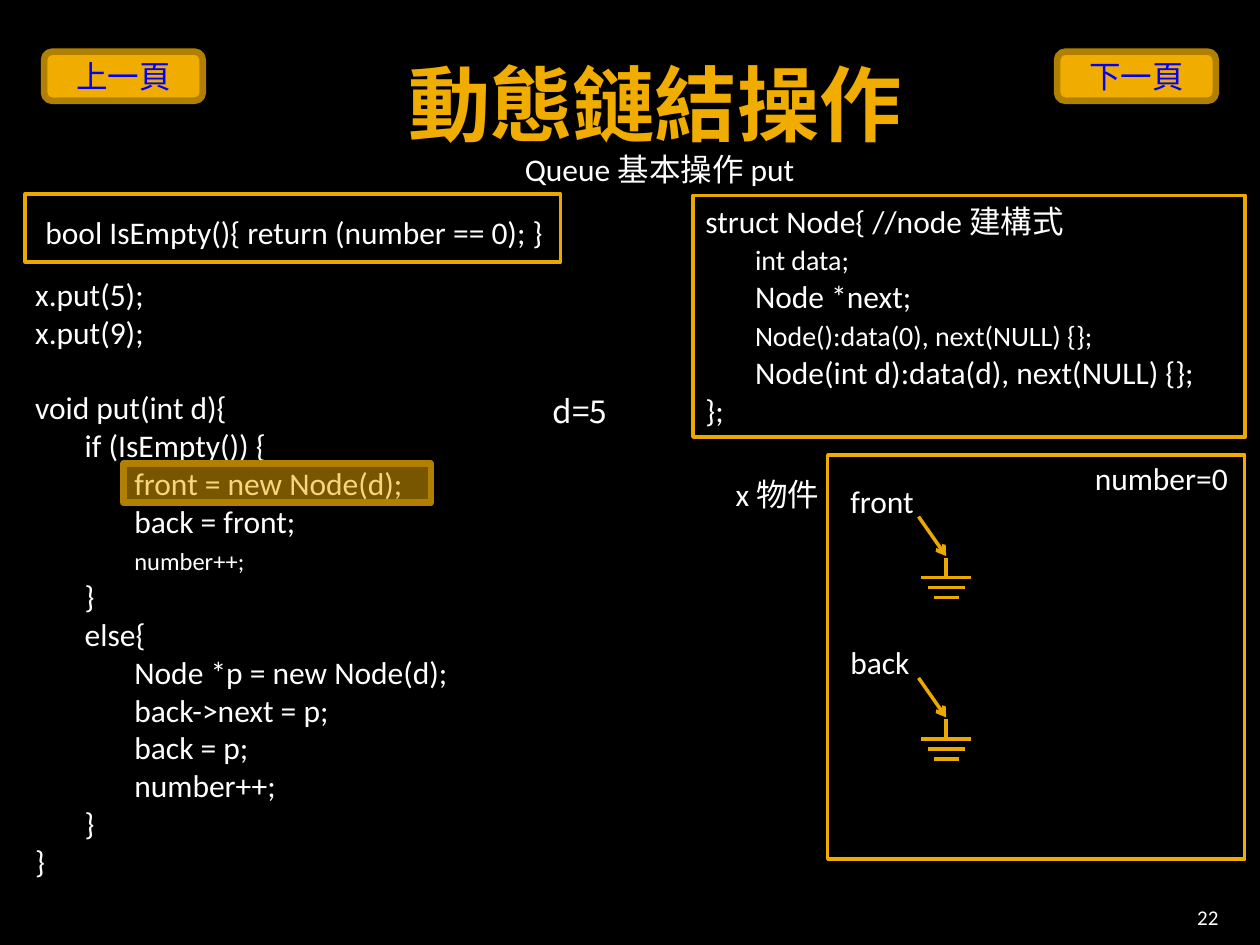
from lxml.etree import SubElement
from pptx import Presentation
from pptx.dml.color import RGBColor
from pptx.enum.shapes import MSO_CONNECTOR as Link, MSO_SHAPE as Preset
from pptx.enum.text import MSO_ANCHOR as Anchor, PP_ALIGN as Align
from pptx.oxml.ns import qn
from pptx.util import Pt

BLACK = RGBColor(0x00, 0x00, 0x00)
WHITE = RGBColor(0xFF, 0xFF, 0xFF)
BLUE = RGBColor(0x00, 0x00, 0xFF)
AMBER = RGBColor(0xF0, 0xAD, 0x00)
GOLD = RGBColor(0xEB, 0xA9, 0x00)
BRONZE = RGBColor(0xB2, 0x80, 0x00)
LATIN, CJK = "Calibri", "Noto Sans CJK SC"
TAB = 28.35

PUT_CODE = [
    "void put(int d){", "\tif (IsEmpty()) {", "\t\tfront = new Node(d);",
    "\t\tback = front;", ("\t\t", "number++;", 14), "\t}", "\telse{",
    "\t\tNode *p = new Node(d);", "\t\tback->next = p;", "\t\tback = p;",
    "\t\tnumber++;", "\t}", "}",
]
NODE_CODE = [
    "struct Node{ //node 建構式", ("\t", "int data;", 16), "\tNode *next;",
    ("\t", "Node():data(0), next(NULL) {};", 16),
    "\tNode(int d):data(d), next(NULL) {};", "};",
]


class Board:
    """Draws text, frames, buttons and pointers on one slide in a shared style."""

    def __init__(self, page):
        self.page = page
        page.background.fill.solid()
        page.background.fill.fore_color.rgb = BLACK

    def font(self, span, size, color, name, bold=False):
        span.font.size, span.font.name, span.font.bold = Pt(size), name, bold
        span.font.color.rgb = color
        SubElement(span._r.get_or_add_rPr(), qn("a:ea")).set("typeface", CJK)

    def set_lines(self, box, lines, size=18, color=WHITE, name=LATIN, bold=False,
                  align=Align.LEFT, anchor=Anchor.TOP, insets=(7.2, 3.6, 7.2, 3.6), wrap=True):
        frame = box.text_frame
        frame.word_wrap, frame.vertical_anchor = wrap, anchor
        (frame.margin_left, frame.margin_top,
         frame.margin_right, frame.margin_bottom) = map(Pt, insets)
        for number, line in enumerate(lines):
            para = frame.add_paragraph() if number else frame.paragraphs[0]
            para.alignment = align
            lead, rest, rest_size = (line, "", size) if isinstance(line, str) else line
            para.text = lead
            self.font(para.runs[0], size, color, name, bold)
            if rest:
                span = para.add_run()
                span.text = rest
                self.font(span, rest_size, color, name, bold)
            if "\t" in lead:
                stops = SubElement(para._p.get_or_add_pPr(), qn("a:tabLst"))
                for step in (1, 2):
                    stop = SubElement(stops, qn("a:tab"))
                    stop.set("pos", str(Pt(TAB * step)))
                    stop.set("algn", "l")
        return frame

    def text(self, left, top, width, height, lines, **style):
        box = self.page.shapes.add_textbox(Pt(left), Pt(top), Pt(width), Pt(height))
        return self.set_lines(box, lines, **style)

    def shape(self, left, top, width, height, preset=Preset.RECTANGLE,
              fill=None, line=GOLD, weight=2, alpha=None):
        box = self.page.shapes.add_shape(preset, Pt(left), Pt(top), Pt(width), Pt(height))
        box.shadow.inherit = False
        box.line.color.rgb, box.line.width = line, Pt(weight)
        if fill is None:
            box.fill.background()
        else:
            box.fill.solid()
            box.fill.fore_color.rgb = fill
        if alpha is not None:
            color = box._element.spPr.find(qn("a:solidFill")).find(qn("a:srgbClr"))
            SubElement(color, qn("a:alpha")).set("val", str(alpha * 1000))
        return box

    def button(self, left, label):
        box = self.shape(left, 29.5, 90.7, 28.1, Preset.ROUNDED_RECTANGLE, AMBER, BRONZE, 3.78)
        self.set_lines(box, [label], color=BLUE, name=CJK, align=Align.CENTER,
                       anchor=Anchor.MIDDLE)

    def line(self, x1, y1, x2, y2, arrow=False):
        link = self.page.shapes.add_connector(Link.STRAIGHT, Pt(x1), Pt(y1), Pt(x2), Pt(y2))
        link.line.color.rgb, link.line.width = GOLD, Pt(2)
        outline = link._element.spPr
        if arrow:
            SubElement(outline.find(qn("a:ln")), qn("a:tailEnd")).set("type", "arrow")
        SubElement(outline, qn("a:effectLst"))

    def null_pointer(self, top, label, width):
        self.text(478.8, top, width, 28.8, [label], wrap=False)
        center, ground = 540.7, top + 58.3
        self.line(524.9, top + 23.4, center, top + 46, arrow=True)
        for row, half in enumerate((14.2, 10.6, 7.1)):
            y = ground + row * 5.7
            self.line(center - half, y, center + half, y)
        self.line(center, ground - 11.4, center, ground)


def main():
    deck = Presentation()
    deck.slide_width, deck.slide_height = Pt(720), Pt(540)
    board = Board(deck.slides.add_slide(deck.slide_layouts[6]))
    code_insets = (11.5, 0, 3.6, 0)

    empty_check = board.shape(14.4, 110.9, 306, 38.9)
    frame = board.set_lines(empty_check, ["bool IsEmpty(){ return (number == 0); }"],
                            insets=code_insets)
    frame.paragraphs[0].line_spacing = 1.5
    board.text(59, 15.1, 630.7, 72, ["動態鏈結操作"], size=47, color=AMBER, bold=True,
               align=Align.CENTER, anchor=Anchor.BOTTOM, insets=(7.2, 0, 7.2, 0))
    frame = board.text(8.6, 157, 311.8, 375.8, ["x.put(5);", "x.put(9);"] + PUT_CODE,
                       insets=code_insets)
    frame.paragraphs[1].space_after = Pt(21.6)
    board.text(645.8, 509.8, 57.6, 21.6, ["22"], size=12, align=Align.RIGHT,
               anchor=Anchor.BOTTOM, insets=(7.2, 3.6, 7.2, 0))
    board.text(291.6, 82.1, 170.6, 28.8, ["Queue 基本操作 put"], align=Align.CENTER)

    board.shape(473, 259.9, 238.3, 231.1, line=AMBER)
    board.shape(70.6, 265, 175.7, 22.3, fill=AMBER, line=BRONZE, weight=3.78, alpha=50)
    board.text(413.3, 267.8, 62.6, 28.8, ["x 物件"])
    board.text(618.5, 258.5, 92.2, 28.8, ["number=0"], wrap=False)
    board.null_pointer(271.8, "front", 51.8)
    board.null_pointer(364, "back", 49.7)

    board.set_lines(board.shape(396, 111.6, 315.4, 138.2), NODE_CODE)
    board.text(308.9, 220.3, 49.7, 28.8, ["d=5"], name=CJK, wrap=False)
    for left, label in ((25.2, "上一頁"), (604.1, "下一頁")):
        board.button(left, label)
    deck.save("out.pptx")


if __name__ == "__main__":
    main()
